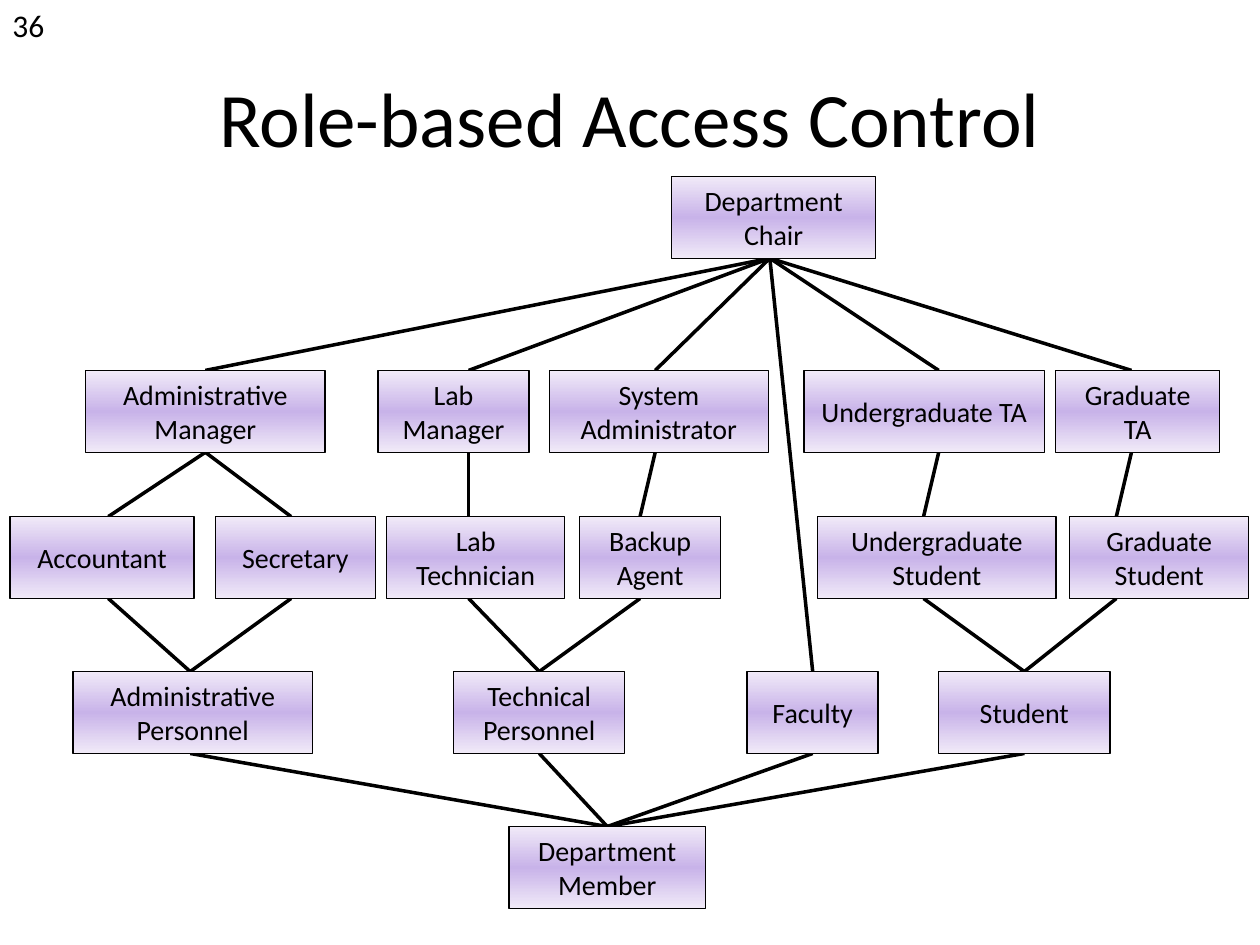
from copy import deepcopy
from dataclasses import dataclass
from typing import Optional

from lxml.etree import SubElement
from pptx import Presentation
from pptx.dml.color import RGBColor
from pptx.enum.shapes import MSO_CONNECTOR, MSO_SHAPE
from pptx.enum.text import MSO_ANCHOR, PP_ALIGN
from pptx.oxml.ns import qn
from pptx.util import Inches, Pt

COLORS = {"ink": "000000", "edge": "F1EAF8", "middle": "C8B3E9"}
FONT = "Calibri"
BOX_H = 0.65
TOP, BOTTOM = 0, 2  # connection sites of a rectangle
CHAIR_Y, MANAGER_Y, WORKER_Y, GROUP_Y, MEMBER_Y = 1.4, 2.94, 4.1, 5.33, 6.56


@dataclass(frozen=True)
class Role:
    name: str
    left: float
    top: float
    width: float
    port: Optional[float] = None  # x of the line ends when off centre

    @property
    def line_x(self) -> float:
        return self.left + self.width / 2 if self.port is None else self.port


ROLES = [
    Role("Department Chair", 5.33, CHAIR_Y, 1.62, 6.11),
    Role("Administrative Manager", 0.68, MANAGER_Y, 1.9),
    Role("Lab Manager", 3, MANAGER_Y, 1.2, 3.72),
    Role("System Administrator", 4.36, MANAGER_Y, 1.74, 5.2),
    Role("Undergraduate TA", 6.38, MANAGER_Y, 1.91, 7.45),
    Role("Graduate TA", 8.38, MANAGER_Y, 1.3, 8.98),
    Role("Accountant", 0.08, WORKER_Y, 1.46, 0.86),
    Role("Secretary", 1.71, WORKER_Y, 1.27, 2.31),
    Role("Lab Technician", 3.07, WORKER_Y, 1.41, 3.72),
    Role("Backup Agent", 4.6, WORKER_Y, 1.12, 5.08),
    Role("Undergraduate Student", 6.49, WORKER_Y, 1.89, 7.33),
    Role("Graduate Student", 8.49, WORKER_Y, 1.42, 8.86),
    Role("Administrative Personnel", 0.58, GROUP_Y, 1.9, 1.51),
    Role("Technical Personnel", 3.6, GROUP_Y, 1.36),
    Role("Faculty", 5.93, GROUP_Y, 1.04),
    Role("Student", 7.45, GROUP_Y, 1.36),
    Role("Department Member", 4.04, MEMBER_Y, 1.56),
]

# Each senior role and the roles directly below it
HIERARCHY = {
    "Department Chair": ["Administrative Manager", "Lab Manager", "System Administrator",
                         "Faculty", "Undergraduate TA", "Graduate TA"],
    "Administrative Manager": ["Accountant", "Secretary"],
    "Lab Manager": ["Lab Technician"],
    "System Administrator": ["Backup Agent"],
    "Undergraduate TA": ["Undergraduate Student"],
    "Graduate TA": ["Graduate Student"],
    "Accountant": ["Administrative Personnel"],
    "Secretary": ["Administrative Personnel"],
    "Lab Technician": ["Technical Personnel"],
    "Backup Agent": ["Technical Personnel"],
    "Undergraduate Student": ["Student"],
    "Graduate Student": ["Student"],
    "Administrative Personnel": ["Department Member"],
    "Technical Personnel": ["Department Member"],
    "Faculty": ["Department Member"],
    "Student": ["Department Member"],
}


def rgb(key: str) -> RGBColor:
    return RGBColor.from_string(COLORS[key])


def write(sp, text: str, size: int, align=PP_ALIGN.CENTER, anchor=MSO_ANCHOR.MIDDLE) -> None:
    tf = sp.text_frame
    tf.word_wrap = True
    tf.vertical_anchor = anchor
    p = tf.paragraphs[0]
    p.alignment = align
    r = p.add_run()
    r.text = text
    r.font.name = FONT
    r.font.size = Pt(size)
    r.font.color.rgb = rgb("ink")


def add_line(s, upper: Role, lower: Role):
    line = s.shapes.add_connector(
        MSO_CONNECTOR.STRAIGHT,
        Inches(upper.line_x), Inches(upper.top + BOX_H),
        Inches(lower.line_x), Inches(lower.top))
    line.line.color.rgb = rgb("ink")
    line.line.width = Pt(2)
    SubElement(line._element.spPr, qn("a:effectLst"))
    return line


def fill_gradient(sp) -> None:
    sp.fill.gradient()
    sp.fill.gradient_angle = 90
    stop_list = sp._element.spPr.find(qn("a:gradFill")).find(qn("a:gsLst"))
    stop_list.append(deepcopy(stop_list[-1]))
    for stop, position, key in zip(sp.fill.gradient_stops, (0, 0.5, 1),
                                   ("edge", "middle", "edge")):
        stop.position = position
        stop.color.rgb = rgb(key)


def add_box(s, role: Role):
    sp = s.shapes.add_shape(MSO_SHAPE.RECTANGLE, Inches(role.left), Inches(role.top),
                            Inches(role.width), Inches(BOX_H))
    sp.shadow.inherit = False
    fill_gradient(sp)
    sp.line.color.rgb = rgb("ink")
    sp.line.width = Pt(0.75)
    write(sp, role.name, 16)
    return sp


def main() -> None:
    prs = Presentation()
    prs.slide_width, prs.slide_height = Inches(10), Inches(7.5)
    s = prs.slides.add_slide(prs.slide_layouts[5])

    # Title and slide number
    title = s.shapes.title
    title.left, title.top = Inches(0.5), Inches(0.3)
    title.width, title.height = Inches(9), Inches(1.25)
    write(title, "Role-based Access Control", 44)
    number = s.shapes.add_textbox(0, 0, Inches(1), Inches(0.4))
    write(number, "36", 18, PP_ALIGN.LEFT, MSO_ANCHOR.TOP)

    # Lines lie behind the boxes
    roles = {role.name: role for role in ROLES}
    links = [(add_line(s, roles[upper], roles[lower]), roles[upper], roles[lower])
             for upper, lowers in HIERARCHY.items() for lower in lowers]
    boxes = {role.name: add_box(s, role) for role in ROLES}

    # Join the line ends that meet the middle of a side
    for line, upper, lower in links:
        if upper.port is None:
            line.begin_connect(boxes[upper.name], BOTTOM)
        if lower.port is None:
            line.end_connect(boxes[lower.name], TOP)

    prs.save("out.pptx")


if __name__ == "__main__":
    main()
